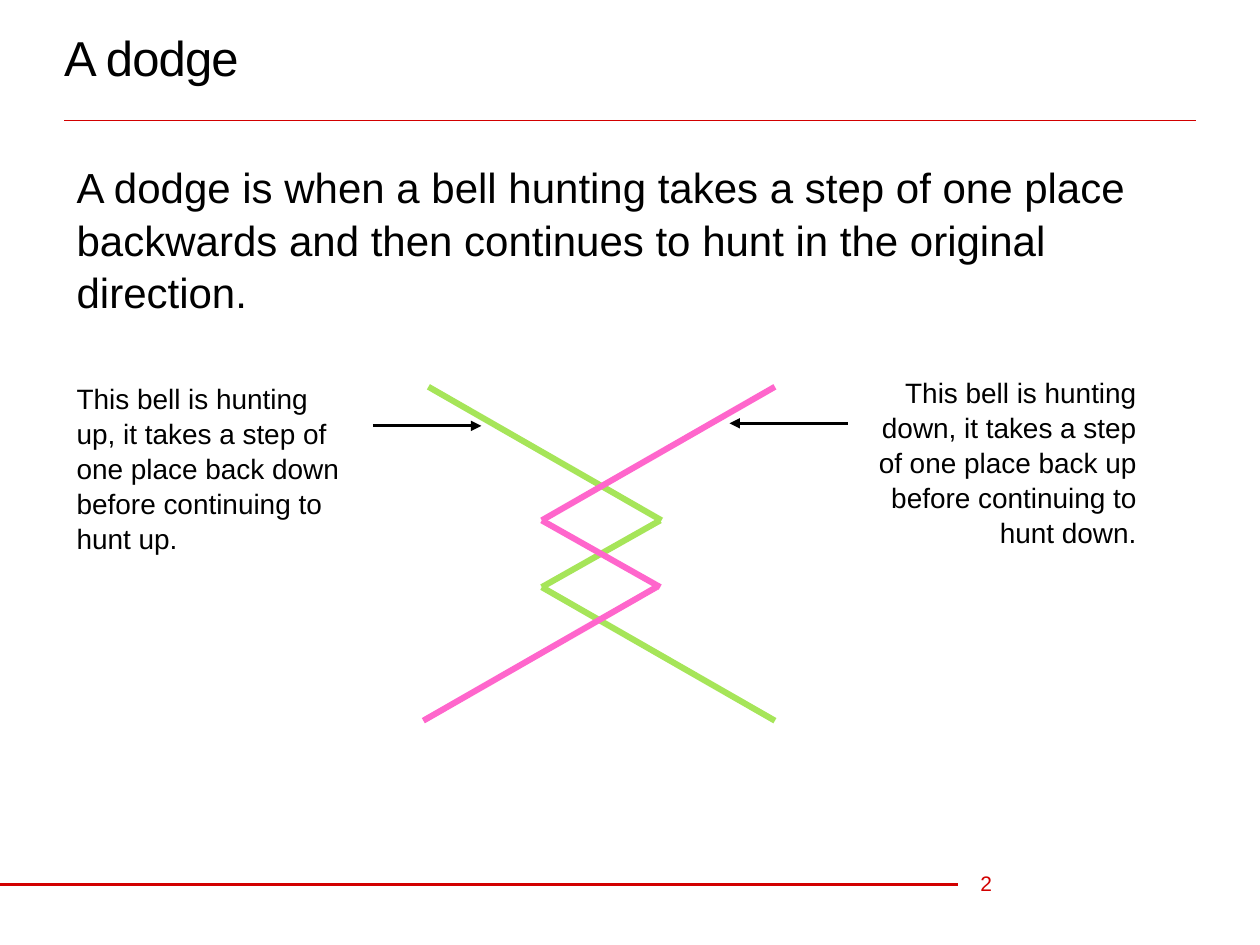
from pptx import Presentation
from pptx.dml.color import RGBColor as Rgb
from pptx.enum.shapes import MSO_CONNECTOR as Conn
from pptx.enum.text import MSO_ANCHOR as Anchor, MSO_AUTO_SIZE as Auto, PP_ALIGN as Align
from pptx.oxml.ns import qn
from pptx.util import Inches, Pt

hues = {"red": "D20000", "black": "000000", "green": "A6E559", "pink": "FF66CC"}
wide, high = 10, 7.5
left, span = 0.51, 8.98

deck = Presentation()
deck.slide_width, deck.slide_height = Inches(wide), Inches(high)
slide = deck.slides.add_slide(deck.slide_layouts[1])
shapes = slide.shapes


def line(x1, y1, x2, y2, hue, width, arrow=False):
    link = shapes.add_connector(Conn.STRAIGHT, *map(Inches, (x1, y1, x2, y2)))
    link.line.color.rgb = Rgb.from_string(hues[hue])
    link.line.width = Pt(width)
    props = link._element.spPr
    if arrow:
        tip = props.find(qn("a:ln")).makeelement(qn("a:tailEnd"), {"type": "triangle"})
        props.find(qn("a:ln")).append(tip)
    props.append(props.makeelement(qn("a:effectLst"), {}))


def write(box, place, text, size, hue="black", align=Align.LEFT, anchor=Anchor.TOP, pad=(0, 0), pitch=1.04):
    box.left, box.top, box.width, box.height = map(Inches, place)
    frame = box.text_frame
    frame.word_wrap = True
    frame.auto_size = Auto.NONE
    frame.vertical_anchor = anchor
    frame.margin_left = frame.margin_right = Inches(pad[0])
    frame.margin_top = frame.margin_bottom = Inches(pad[1])
    para = frame.paragraphs[0]
    props = para._p.get_or_add_pPr()
    props.set("marL", "0")
    props.set("indent", "0")
    props.append(props.makeelement(qn("a:buNone"), {}))
    para.alignment = align
    para.line_spacing = pitch
    para.space_before = Pt(0)
    run = para.add_run()
    run.text = text
    run.font.name = "Arial"
    run.font.size = Pt(size)
    run.font.color.rgb = Rgb.from_string(hues[hue])
    return run


line(left, 0.96, left + span, 0.96, "red", 0.5)
line(0, 7.02, 0.76 * wide, 7.02, "red", 2)

page = shapes.add_textbox(0, 0, 0, 0)
write(page, (7.78, 6.81, 0.51, 0.4), "2", 12, "red", anchor=Anchor.MIDDLE, pitch=1.0)

head = write(shapes.title, (left, 0.05, span, 0.81), "A dodge", 28, anchor=Anchor.MIDDLE, pitch=1.0)
head.font._element.set("spc", "-50")

write(slide.placeholders[1], (6.85, 2.97, 2.17, 2.12),
      "This bell is hunting down, it takes a step of one place back up before continuing to hunt down.",
      16, align=Align.RIGHT)

top, step = 3.07, 0.53
rows = [top + step * n for n in (0, 2, 3, 5)]
paths = {
    "green": ((3.4, 5.25), (5.24, 4.3), (4.3, 6.15)),
    "pink": ((6.15, 4.3), (4.3, 5.24), (5.21, 3.36)),
}
for hue, legs in paths.items():
    for (x1, x2), y1, y2 in zip(legs, rows, rows[1:]):
        line(x1, y1, x2, y2, hue, 3.5)

notes = (
    (1.22, span, 1.62, 24, "A dodge is when a bell hunting takes a step of one place "
     "backwards and then continues to hunt in the original direction."),
    (2.97, 2.32, 1.45, 16, "This bell is hunting up, it takes a step of one place "
     "back down before continuing to hunt up."),
)
for y, w, h, size, text in notes:
    write(shapes.add_textbox(0, 0, 0, 0), (left, y, w, h), text, size, pad=(0.1, 0.05))

line(2.96, 3.38, 3.82, 3.38, "black", 1.75, arrow=True)
line(6.73, 3.36, 5.79, 3.36, "black", 1.75, arrow=True)

deck.save("out.pptx")
